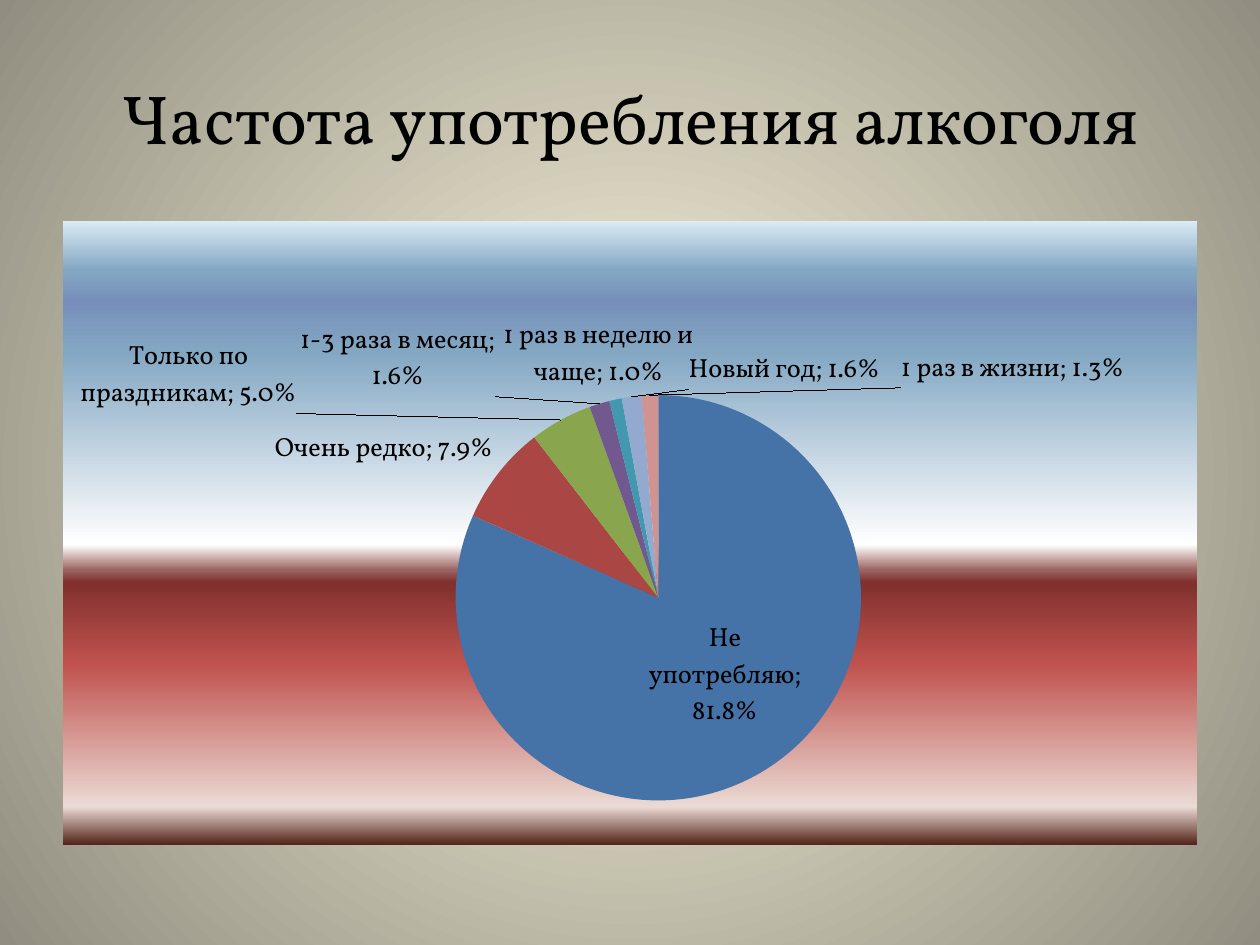
from pptx import Presentation
from pptx.chart.data import CategoryChartData
from pptx.dml.color import RGBColor
from pptx.enum import chart as ch, text
from pptx.oxml import parse_xml
from pptx.oxml.ns import nsdecls, qn
from pptx.util import Pt

FONT = "Vollkorn"
PERCENT = "0.0%"
COLORS = {
    "text": "000000",
    "glow": "FCF7DD",
    "edge": "918E81",
}
BANDS = [(0, "DCEBF5"), (8, "83A7C3"), (13, "768FB9"), (21, "83A7C3"),
         (52, "FFFFFF"), (56, "9C6563"), (58, "80302D"), (71, "C0524E"),
         (94, "EBDAD4"), (100, "55261C")]

# category, share, slice colour, label shift as a fraction of the chart
ANSWERS = [
    ("Не употребляю", 0.818, "4572A7", (0.01, -0.01)),
    ("Очень редко", 0.079, "AA4643", (0, 0)),
    ("Только по праздникам", 0.05, "89A54E", (-0.23, 0)),
    ("1-3 раза в месяц", 0.016, "71588F", (-0.09, 0)),
    ("1 раз в неделю и чаще", 0.01, "4198AF", (0.07, 0)),
    ("Новый год", 0.016, "93A9CF", (0.22, 0)),
    ("1 раз в жизни", 0.013, "D19392", (0.32, 0)),
]


def gradient(stops, direction):
    """Return gradFill markup for (percent, colour) stops."""
    gs = "".join(f'<a:gs pos="{pos * 1000}"><a:srgbClr val="{color}"/></a:gs>'
                 for pos, color in stops)
    return f'<a:gradFill rotWithShape="1"><a:gsLst>{gs}</a:gsLst>{direction}</a:gradFill>'


def set_background(s):
    circle = ('<a:path path="circle"><a:fillToRect l="50000" t="50000" '
              'r="50000" b="50000"/></a:path>')
    fill = gradient([(0, COLORS["glow"]), (100, COLORS["edge"])], circle)
    s._element.cSld.insert(0, parse_xml(
        f'<p:bg {nsdecls("p", "a")}><p:bgPr>{fill}<a:effectLst/></p:bgPr></p:bg>'))


def style_font(font, size):
    font.name = FONT
    font.size = Pt(size)
    font.color.rgb = RGBColor.from_string(COLORS["text"])


def set_title(s, wording):
    sp = s.shapes.title
    sp.left, sp.top, sp.width, sp.height = Pt(36), Pt(21.6), Pt(648), Pt(90)
    tf = sp.text_frame
    tf.text = wording
    tf.vertical_anchor = text.MSO_ANCHOR.MIDDLE
    p = tf.paragraphs[0]
    p.alignment = text.PP_ALIGN.CENTER
    style_font(p.font, 39.6)


def manual_layout(x, y, size=None):
    """Return layout markup; with a size it places the inner plot area."""
    target = modes = extent = ""
    if size:
        target = '<c:layoutTarget val="inner"/>'
        modes = '<c:xMode val="edge"/><c:yMode val="edge"/>'
        extent = f'<c:w val="{size[0]}"/><c:h val="{size[1]}"/>'
    return (f'<c:layout {nsdecls("c")}><c:manualLayout>{target}{modes}'
            f'<c:x val="{x}"/><c:y val="{y}"/>{extent}</c:manualLayout></c:layout>')


def point_label(idx, shift):
    """Return the label of one slice, moved by shift from its usual place."""
    position = "ctr" if idx == 0 else "outEnd"
    return parse_xml(
        f'<c:dLbl {nsdecls("c")}><c:idx val="{idx}"/>{manual_layout(*shift)}'
        f'<c:numFmt formatCode="{PERCENT}" sourceLinked="0"/>'
        f'<c:dLblPos val="{position}"/><c:showLegendKey val="0"/>'
        '<c:showVal val="1"/><c:showCatName val="1"/>'
        '<c:showSerName val="0"/><c:showPercent val="0"/>'
        '<c:showBubbleSize val="0"/><c:separator>; </c:separator></c:dLbl>')


def label_slices(series):
    labels = series.data_labels
    labels.show_value = labels.show_category_name = True
    labels.number_format = PERCENT
    labels.number_format_is_linked = False
    style_font(labels.font, 15)
    labels.position = ch.XL_LABEL_POSITION.OUTSIDE_END
    group = labels._element
    group.find(qn("c:showBubbleSize")).addnext(
        parse_xml(f'<c:separator {nsdecls("c")}>; </c:separator>'))
    for i, (_, _, _, shift) in enumerate(ANSWERS):
        group.insert(i, point_label(i, shift))


def add_pie(s):
    data = CategoryChartData(number_format=PERCENT)
    data.categories = [answer[0] for answer in ANSWERS]
    data.add_series("Series 1", [answer[1] for answer in ANSWERS])
    chart = s.shapes.add_chart(ch.XL_CHART_TYPE.PIE, Pt(36), Pt(126),
                               Pt(648), Pt(356.4), data).chart
    chart.has_legend = chart.has_title = False
    style_font(chart.font, 18)
    plot = chart.plots[0]
    plot.vary_by_categories = True
    series = plot.series[0]
    for i, (_, _, color, _) in enumerate(ANSWERS):
        fill = series.points[i].format.fill
        fill.solid()
        fill.fore_color.rgb = RGBColor.from_string(color)
    label_slices(series)

    space = chart._chartSpace
    area = space.find(qn("c:chart")).find(qn("c:plotArea"))
    for old in area.findall(qn("c:layout")):
        area.remove(old)
    area.insert(0, parse_xml(manual_layout(0.15, 0.28, (0.75, 0.65))))
    fill = gradient(BANDS, '<a:lin ang="5400000" scaled="0"/>')
    space.find(qn("c:txPr")).addprevious(parse_xml(
        f'<c:spPr {nsdecls("c", "a")}>{fill}<a:ln><a:noFill/></a:ln></c:spPr>'))


def main():
    prs = Presentation()
    prs.slide_width, prs.slide_height = Pt(720), Pt(540)
    s = prs.slides.add_slide(prs.slide_layouts[5])
    set_background(s)
    set_title(s, "Частота употребления алкоголя")
    add_pie(s)
    prs.save("out.pptx")


if __name__ == "__main__":
    main()
